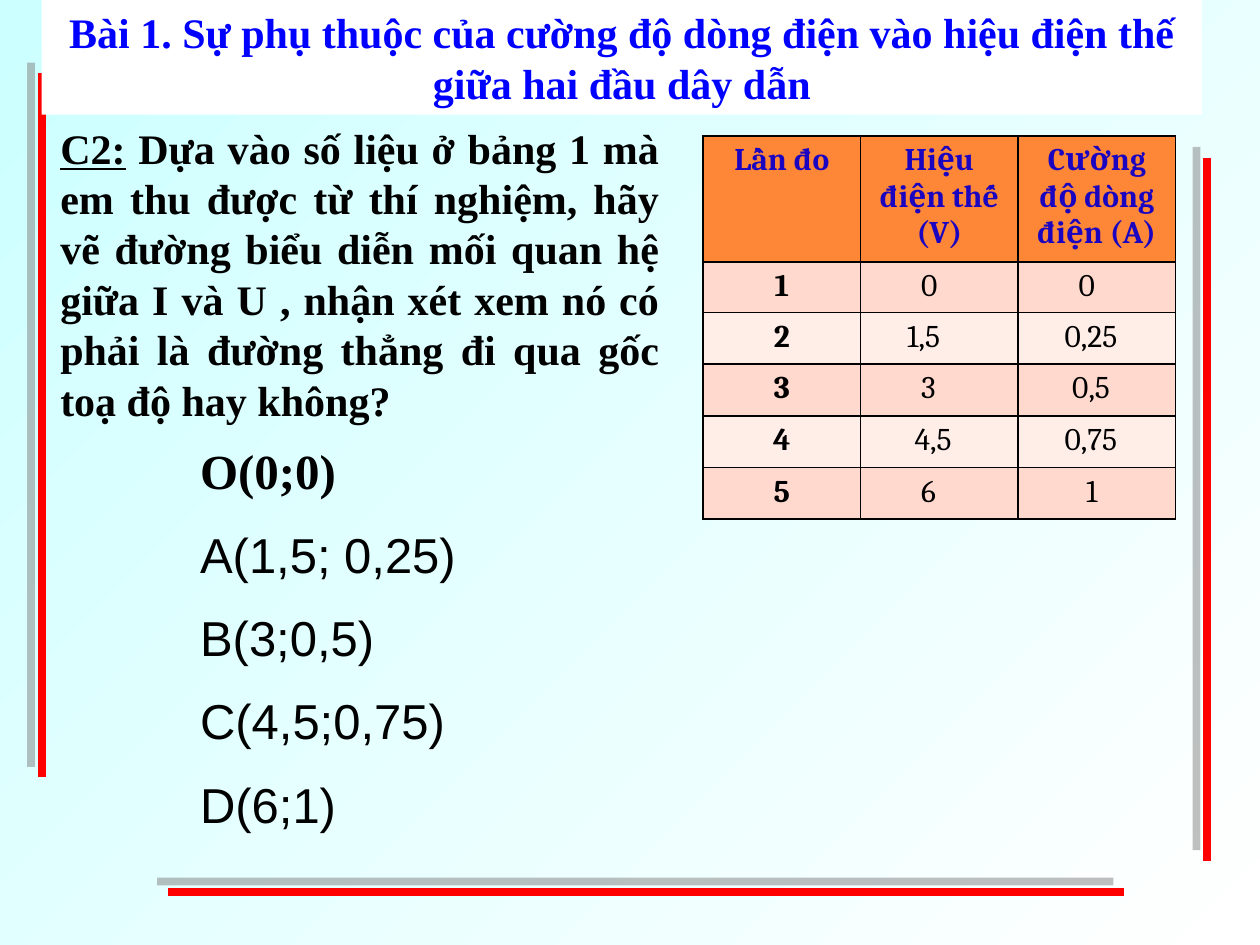
from lxml import etree
from pptx import Presentation
from pptx.dml.color import RGBColor
from pptx.enum.shapes import MSO_CONNECTOR, MSO_SHAPE
from pptx.enum.text import MSO_ANCHOR, MSO_AUTO_SIZE, PP_ALIGN
from pptx.oxml import parse_xml
from pptx.oxml.ns import nsdecls, qn
from pptx.util import Inches, Pt

STRAIGHT = MSO_CONNECTOR.STRAIGHT
RECTANGLE = MSO_SHAPE.RECTANGLE
MIDDLE = MSO_ANCHOR.MIDDLE
GROW = MSO_AUTO_SIZE.SHAPE_TO_FIT_TEXT
CENTER, JUSTIFY = PP_ALIGN.CENTER, PP_ALIGN.JUSTIFY

SERIF, SANS, TABLE_FONT = "Times New Roman", "Arial", "Cambria"
BLACK, WHITE, RED, BLUE = "000000", "FFFFFF", "FF0000", "0000FF"
HEADER_TEXT, HEADER_FILL = "1A04C0", "FE8637"
ROW_FILLS = ("FFD9CE", "FFEDE8")


def color(hex_string):
    return RGBColor.from_string(hex_string)


class SlideBuilder:
    def __init__(self, slide):
        self.slide = slide

    def background(self, start, end):
        fill = self.slide.background.fill
        fill.gradient()
        fill.gradient_angle = 315
        for stop, stop_color, position in zip(fill.gradient_stops, (start, end), (0, 1)):
            stop.color.rgb = color(stop_color)
            stop.position = position

    def style(self, paragraph, font, size, text_color, bold, alignment):
        paragraph.alignment = alignment
        paragraph.font.name = font
        paragraph.font.size = Pt(size)
        paragraph.font.bold = bold
        paragraph.font.color.rgb = color(text_color)

    def space_before(self, paragraph, percent):
        spacing = parse_xml(
            f'<a:spcBef {nsdecls("a")}><a:spcPct val="{percent * 1000}"/></a:spcBef>')
        paragraph._p.get_or_add_pPr().insert(0, spacing)

    def frame_lines(self, lines):
        group = self.slide.shapes.add_group_shape()
        for points in lines:
            line = group.shapes.add_connector(STRAIGHT, *map(Inches, points))
            line.line.color.rgb = color(RED)
            line.line.width = Pt(4.5)
            line._element.spPr.append(parse_xml(
                f'<a:effectLst {nsdecls("a")}>'
                f'<a:outerShdw dist="{Pt(8.5)}" dir="13500000" algn="ctr" rotWithShape="0">'
                '<a:srgbClr val="808080"><a:alpha val="50000"/></a:srgbClr>'
                '</a:outerShdw></a:effectLst>'))

    def text_box(self, position, paragraphs, wrap=True):
        """Each paragraph is (runs, font, size, bold); a run is (text, underline)."""
        frame = self.slide.shapes.add_textbox(*map(Inches, position)).text_frame
        frame.word_wrap = wrap
        frame.auto_size = GROW
        for index, (runs, font, size, bold) in enumerate(paragraphs):
            paragraph = frame.add_paragraph() if index else frame.paragraphs[0]
            for text, underline in runs:
                run = paragraph.add_run()
                run.text = text
                run.font.underline = underline
            self.style(paragraph, font, size, BLACK, bold, JUSTIFY)
            self.space_before(paragraph, 50)

    def title(self, position, text):
        shape = self.slide.shapes.add_shape(RECTANGLE, *map(Inches, position))
        shape.shadow.inherit = False
        shape.fill.solid()
        shape.fill.fore_color.rgb = color(WHITE)
        shape.line.fill.background()
        frame = shape.text_frame
        frame.word_wrap = True
        frame.auto_size = GROW
        frame.vertical_anchor = MIDDLE
        frame.text = text
        self.style(frame.paragraphs[0], SERIF, 24, BLUE, True, CENTER)

    def cell(self, cell, text, fill, text_color, bold, indent=None):
        properties = cell._tc.get_or_add_tcPr()
        for side in ("lnL", "lnR", "lnT", "lnB"):
            border = etree.SubElement(properties, qn(f"a:{side}"), w=str(Pt(1)))
            solid = etree.SubElement(border, qn("a:solidFill"))
            etree.SubElement(solid, qn("a:srgbClr"), val=BLACK)
        cell.fill.solid()
        cell.fill.fore_color.rgb = color(fill)
        cell.text = text
        paragraph = cell.text_frame.paragraphs[0]
        self.style(paragraph, TABLE_FONT, 18, text_color, bold,
                   CENTER if indent is None else JUSTIFY)
        if indent is not None:
            paragraph._p.get_or_add_pPr().set("marL", str(Inches(indent)))

    def table(self, position, headers, rows, column_width, row_heights):
        table = self.slide.shapes.add_table(
            len(rows) + 1, len(headers), *map(Inches, position)).table
        for column in table.columns:
            column.width = Inches(column_width)
        for row, height in zip(table.rows, row_heights):
            row.height = Inches(height)
        for column, header in enumerate(headers):
            self.cell(table.cell(0, column), header, HEADER_FILL, HEADER_TEXT, True)
        for number, values in enumerate(rows, 1):
            fill = ROW_FILLS[(number - 1) % 2]
            self.cell(table.cell(number, 0), str(number), fill, BLACK, True)
            for column, (text, indent) in enumerate(values, 1):
                self.cell(table.cell(number, column), text, fill, BLACK, False, indent)


def main():
    presentation = Presentation()
    presentation.slide_width, presentation.slide_height = Inches(10), Inches(7.5)
    builder = SlideBuilder(presentation.slides.add_slide(presentation.slide_layouts[6]))

    # Background and decorative frame
    builder.background("CCFFFF", WHITE)
    builder.frame_lines([(1.33, 7.08, 8.92, 7.08),
                         (0.33, 0.58, 0.33, 6.17),
                         (9.58, 1.25, 9.58, 6.83)])

    # Question
    question = (" Dựa vào số liệu ở bảng 1 mà em thu được từ thí nghiệm, hãy vẽ đường "
                "biểu diễn mối quan hệ giữa I và U , nhận xét xem nó có phải là đường "
                "thẳng đi qua gốc toạ độ hay không?")
    builder.text_box((0.38, 0.92, 4.95, 2.52),
                     [([("C2:", True), (question, False)], SERIF, 24, True)])

    # Measurements: each value with its left indent
    builder.table(
        (5.58, 1.08, 3.75, 3.02),
        ("Lần đo", "Hiệu điện thế (V)", "Cường độ dòng điện (A)"),
        [(("0", 0.38), ("0", 0.38)),
         (("1,5", 0.27), ("0,25", 0.27)),
         (("3", 0.38), ("0,5", 0.33)),
         (("4,5", 0.33), ("0,75", 0.27)),
         (("6", 0.38), ("1", 0.44))],
        1.25, [1, 0.4] + [0.41] * 4)

    # Title
    builder.title((0.33, 0, 9.21, 0.91),
                  "Bài 1. Sự phụ thuộc của cường độ dòng điện vào hiệu điện thế "
                  "giữa hai đầu dây dẫn")

    # Points of the graph
    points = ("A(1,5; 0,25)", "B(3;0,5)", "C(4,5;0,75)", "D(6;1)")
    builder.text_box((1.49, 3.45, 2.23, 3.4),
                     [([("O(0;0)", False)], SERIF, 28, True)]
                     + [([(point, False)], SANS, 28, False) for point in points],
                     wrap=False)

    presentation.save("out.pptx")


if __name__ == "__main__":
    main()
